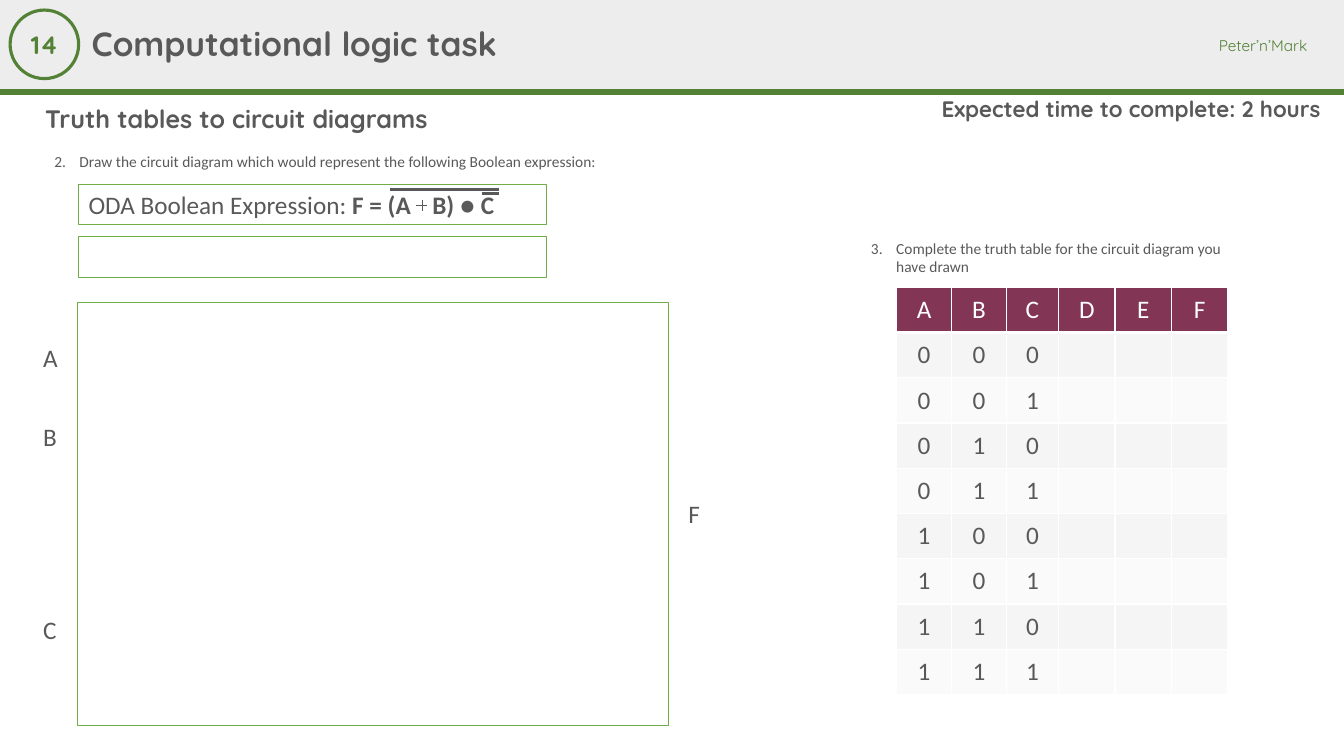
from itertools import product

from lxml.etree import SubElement
from pptx import Presentation
from pptx.dml.color import RGBColor
from pptx.enum.shapes import MSO_CONNECTOR, MSO_SHAPE
from pptx.enum.text import MSO_ANCHOR, MSO_AUTO_SIZE, PP_ALIGN
from pptx.oxml import parse_xml
from pptx.oxml.ns import nsdecls, qn
from pptx.util import Inches, Pt

WHITE = RGBColor(0xFF, 0xFF, 0xFF)
BAND = RGBColor(0xED, 0xED, 0xED)
GREEN = RGBColor(0x53, 0x81, 0x35)
LIME = RGBColor(0x70, 0xAD, 0x47)
GREY = RGBColor(0x59, 0x59, 0x59)
PLUM = RGBColor(0x82, 0x35, 0x54)
ODD = RGBColor(0xF6, 0xF5, 0xF5)
EVEN = RGBColor(0xFA, 0xFA, 0xFA)
HEAD, BODY = "Quicksand", "Calibri"


class Sheet:
    def __init__(self, deck):
        self.slide = deck.slides.add_slide(deck.slide_layouts[5])
        self.shapes = self.slide.shapes

    def style(self, para, size, font=BODY, color=GREY, bold=False, align=PP_ALIGN.LEFT):
        para.alignment = align
        para.font.size = Pt(size)
        para.font.name = font
        para.font.bold = bold
        para.font.color.rgb = color

    def title(self, text, box, size):
        """Fill the title placeholder and bring it in front of the band."""
        title = self.shapes.title
        title._element.getparent().append(title._element)
        title.left, title.top, title.width, title.height = map(Inches, box)
        frame = title.text_frame
        frame.text = text
        frame.auto_size = MSO_AUTO_SIZE.NONE
        frame.vertical_anchor = MSO_ANCHOR.MIDDLE
        frame.paragraphs[0].line_spacing = 0.9
        self.style(frame.paragraphs[0], size, HEAD, bold=True)

    def text(self, text, box, size, wrap=True, number=None, spacing=None,
             anchor=MSO_ANCHOR.TOP, **look):
        frame = self.shapes.add_textbox(*map(Inches, box)).text_frame
        frame.word_wrap = wrap
        frame.vertical_anchor = anchor
        para = frame.paragraphs[0]
        para.text = text
        if spacing:
            para.line_spacing = spacing
        if number:
            props = para._p.get_or_add_pPr()
            props.set("marL", str(Inches(0.25)))
            props.set("indent", str(-Inches(0.25)))
            SubElement(props, qn("a:buAutoNum"), type="arabicPeriod", startAt=str(number))
        self.style(para, size, **look)

    def shape(self, kind, box, fill=None, line=None, width=0.75):
        shape = self.shapes.add_shape(kind, *map(Inches, box))
        shape.shadow.inherit = False
        if fill:
            shape.fill.solid()
            shape.fill.fore_color.rgb = fill
        else:
            shape.fill.background()
        if line:
            shape.line.color.rgb = line
            shape.line.width = Pt(width)
        else:
            shape.line.fill.background()
        return shape

    def line(self, ends, color, width):
        line = self.shapes.add_connector(MSO_CONNECTOR.STRAIGHT, *map(Inches, ends))
        line.line.color.rgb = color
        line.line.width = Pt(width)
        SubElement(line._element.spPr, qn("a:effectLst"))

    def badge(self, text, box):
        frame = self.shape(MSO_SHAPE.OVAL, box, line=GREEN, width=2.25).text_frame
        frame.word_wrap = False
        frame.text = text
        self.style(frame.paragraphs[0], 18, HEAD, GREEN, True, PP_ALIGN.CENTER)

    def formula(self, label, term, box, stop):
        """Framed expression; the tab stop leaves room for the drawn plus."""
        frame = self.shape(MSO_SHAPE.RECTANGLE, box, line=LIME).text_frame
        para = frame.paragraphs[0]
        para.add_run().text = label
        bold = para.add_run()
        bold.text = term
        bold.font.bold = True
        tabs = SubElement(para._p.get_or_add_pPr(), qn("a:tabLst"))
        SubElement(tabs, qn("a:tab"), pos=str(Inches(stop)), algn="l")
        self.style(para, 18, bold=None)

    def table(self, rows, box, widths):
        table = self.shapes.add_table(len(rows), len(widths), *map(Inches, box)).table
        table.first_row = table.horz_banding = False
        for column, width in zip(table.columns, widths):
            column.width = Inches(width)
        for r, row in enumerate(rows):
            for c, value in enumerate(row):
                cell = table.cell(r, c)
                cell.text = value
                cell.vertical_anchor = MSO_ANCHOR.MIDDLE
                if r == 0:
                    cell._tc.get_or_add_tcPr().append(parse_xml(
                        f'<a:lnB {nsdecls("a")} w="{Pt(3)}"><a:solidFill>'
                        f'<a:srgbClr val="{WHITE}"/></a:solidFill></a:lnB>'))
                cell.fill.solid()
                cell.fill.fore_color.rgb = PLUM if r == 0 else ODD if r % 2 else EVEN
                self.style(cell.text_frame.paragraphs[0], 18,
                           color=GREY if r else WHITE, align=PP_ALIGN.CENTER)


def main():
    deck = Presentation()
    deck.slide_width, deck.slide_height = Inches(13.33), Inches(7.5)
    sheet = Sheet(deck)

    sheet.shape(MSO_SHAPE.RECTANGLE, (0, 0, 13.33, 0.91), fill=BAND)
    sheet.line((0, 0.91, 13.33, 0.91), GREEN, 4.5)
    sheet.text("Peter’n’Mark", (11.99, 0.31, 1.22, 0.29), 11, wrap=False,
               font=HEAD, color=GREEN)
    sheet.text("Expected time to complete: 2 hours", (9.24, 0.93, 4.09, 0.4), 16,
               spacing=0.9, font=HEAD, bold=True)
    sheet.badge("14", (0.1, 0.1, 0.68, 0.68))
    sheet.text("Truth tables to circuit diagrams", (0.35, 0.99, 5.71, 0.4), 18,
               spacing=0.9, anchor=MSO_ANCHOR.MIDDLE, font=HEAD, bold=True)
    sheet.title("Computational logic task", (0.81, 0.09, 10.31, 0.73), 24)

    sheet.text("Draw the circuit diagram which would represent the following "
               "Boolean expression:", (0.44, 1.46, 6.23, 0.29), 11, number=2)
    sheet.formula("ODA Boolean Expression: ", "F = (A\tB) ● C", (0.78, 1.83, 4.64, 0.4), 3.41)
    plus = (4.19, 1.98, 4.19, 2.09), (4.13, 2.04, 4.24, 2.04)
    bars = (3.87, 1.88, 4.95, 1.88), (4.78, 1.92, 4.95, 1.92)
    for strokes, width in (plus, 0.5), (bars, 1.5):
        for ends in strokes:
            sheet.line(ends, GREY, width)
    sheet.shape(MSO_SHAPE.RECTANGLE, (0.78, 2.35, 4.64, 0.4), line=LIME)

    pins = ("A", 0.33, 3.35), ("B", 0.33, 4.13), ("C", 0.33, 6.05), ("F", 6.73, 4.89)
    for name, left, top in pins:
        sheet.text(name, (left, top, 0.34, 0.4), 18, wrap=False)

    inputs = [(*bits, "", "", "") for bits in product("01", repeat=3)]
    sheet.table(["ABCDEF", *inputs], (8.89, 2.85, 3.29, 4.04),
                (0.55, 0.54, 0.52, 0.56, 0.56, 0.56))
    sheet.shape(MSO_SHAPE.RECTANGLE, (0.77, 3, 5.86, 4.2), line=LIME, width=1)
    sheet.text("Complete the truth table for the circuit diagram you have drawn",
               (8.54, 2.32, 3.85, 0.47), 11, number=3)
    deck.save("out.pptx")


if __name__ == "__main__":
    main()
